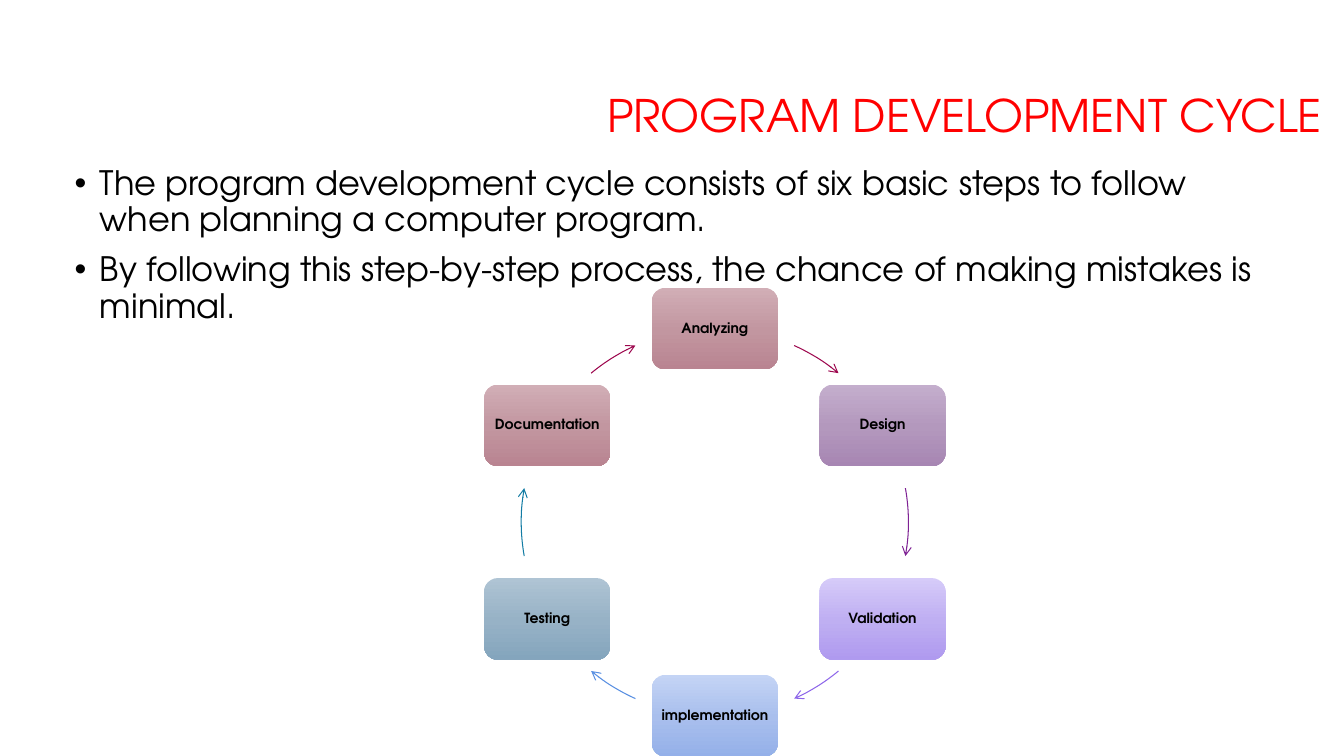
from copy import deepcopy
from math import cos, radians, sin

from lxml.etree import SubElement
from pptx import Presentation
from pptx.dml.color import RGBColor
from pptx.enum.shapes import MSO_SHAPE
from pptx.enum.text import MSO_ANCHOR, MSO_AUTO_SIZE, PP_ALIGN
from pptx.oxml.ns import qn
from pptx.util import Inches, Pt

FONT = "TeX Gyre Adventor"
TITLE = "PROGRAM DEVELOPMENT CYCLE "
POINTS = [
    "The program development cycle consists of six basic steps to follow when planning a computer program.",
    "By following this step-by-step process, the chance of making mistakes is minimal.",
]
# Step, gradient from top to bottom, colour of the arrow to the next step
STEPS = [
    ("Analyzing", ("D1AEB6", "C296A0", "B98491"), "9D074E"),
    ("Design", ("C4AECD", "B398BD", "A786B3"), "7F2294"),
    ("Validation", ("D6CBF9", "BFAFF2", "AF9AEF"), "8D65EA"),
    ("implementation", ("C4D4F5", "A9BFED", "94B0E9"), "588FE2"),
    ("Testing", ("AFC4D4", "97B2C6", "84A5BD"), "127CA4"),
    ("Documentation", ("D1AEB6", "C296A0", "B98491"), "9D074E"),
]
GRADIENT_POSITIONS = (0, 0.52, 1)
# Arrow spans in degrees clockwise from the top; the lower half repeats the upper
HALF_SPANS = [(24.2, 39.7), (79.9, 100.1), (140.3, 155.8)]
SPANS = HALF_SPANS + [(start + 180, end + 180) for start, end in HALF_SPANS]

CENTER_X, CENTER_Y, RADIUS = 7.09, 5.18, 1.92
BOX_WIDTH, BOX_HEIGHT = 1.25, 0.81


def color(value):
    return RGBColor.from_string(value)


def place(shape, left, top, width, height):
    shape.left, shape.top = Inches(left), Inches(top)
    shape.width, shape.height = Inches(width), Inches(height)


def write(para, text, size, fill="000000", bold=False, align=PP_ALIGN.LEFT, before=0):
    para.alignment = align
    para.line_spacing = 0.9
    para.space_before = Pt(before)
    span = para.add_run()
    span.text = text
    span.font.name = FONT
    span.font.size = Pt(size)
    span.font.bold = bold
    span.font.color.rgb = color(fill)


def fill_gradient(shape, colors):
    shape.fill.gradient()
    shape.fill.gradient_angle = 270
    stop_list = shape.element.spPr.find(".//" + qn("a:gsLst"))
    stop_list.append(deepcopy(stop_list[-1]))
    for stop, value, position in zip(shape.fill.gradient_stops, colors, GRADIENT_POSITIONS):
        stop.color.rgb = color(value)
        stop.position = position


def add_step(slide, name, colors, angle):
    x = CENTER_X + RADIUS * sin(radians(angle))
    y = CENTER_Y - RADIUS * cos(radians(angle))
    box = slide.shapes.add_shape(
        MSO_SHAPE.ROUNDED_RECTANGLE,
        Inches(x - BOX_WIDTH / 2), Inches(y - BOX_HEIGHT / 2),
        Inches(BOX_WIDTH), Inches(BOX_HEIGHT))
    box.shadow.inherit = False
    box.line.fill.background()
    fill_gradient(box, colors)
    frame = box.text_frame
    frame.word_wrap = True
    frame.vertical_anchor = MSO_ANCHOR.MIDDLE
    frame.margin_left = frame.margin_right = Inches(0.04)
    frame.margin_top = frame.margin_bottom = Inches(0.04)
    write(frame.paragraphs[0], name, 10, bold=True, align=PP_ALIGN.CENTER)


def add_arrow(slide, span, line_color):
    arc = slide.shapes.add_shape(
        MSO_SHAPE.ARC, Inches(CENTER_X - RADIUS), Inches(CENTER_Y - RADIUS),
        Inches(2 * RADIUS), Inches(2 * RADIUS))
    for index, angle in enumerate(span):
        # Arc angles run from the right, in 60000ths of a degree over 100000
        arc.adjustments[index] = (angle - 90) % 360 * 0.6
    arc.shadow.inherit = False
    arc.fill.background()
    arc.line.color.rgb = color(line_color)
    arc.line.width = Pt(0.75)
    SubElement(arc.line._get_or_add_ln(), qn("a:tailEnd"), type="arrow")


def main():
    deck = Presentation()
    deck.slide_width, deck.slide_height = Inches(13.33), Inches(7.5)
    slide = deck.slides.add_slide(deck.slide_layouts[1])

    title = slide.shapes.title
    place(title, 3.92, 0.47, 9.42, 1.41)
    title.text_frame.auto_size = MSO_AUTO_SIZE.NONE
    title.text_frame.vertical_anchor = MSO_ANCHOR.MIDDLE
    write(title.text_frame.paragraphs[0], TITLE, 32, fill="FF0000", align=PP_ALIGN.RIGHT)

    body = slide.placeholders[1]
    place(body, 0.64, 1.6, 11.97, 4.91)
    frame = body.text_frame
    frame.auto_size = MSO_AUTO_SIZE.NONE
    for index, text in enumerate(POINTS):
        para = frame.add_paragraph() if index else frame.paragraphs[0]
        properties = para._p.get_or_add_pPr()
        properties.set("marL", str(Inches(0.25)))
        properties.set("indent", str(-Inches(0.25)))
        SubElement(properties, qn("a:buChar"), char="•")
        write(para, text, 24, before=10 if index else 0)

    for index, (name, colors, line_color) in enumerate(STEPS):
        add_step(slide, name, colors, index * 360 / len(STEPS))
        add_arrow(slide, SPANS[index], line_color)

    deck.save("out.pptx")


if __name__ == "__main__":
    main()
